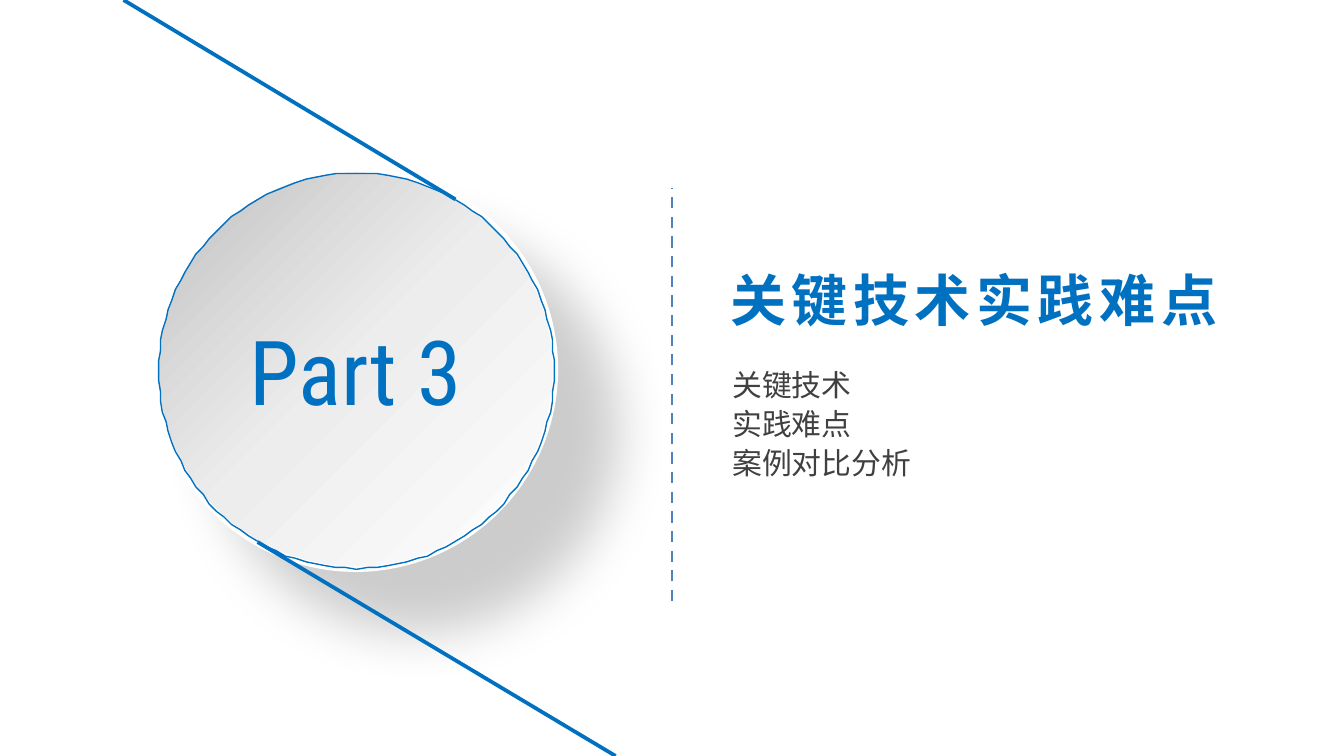
import math

import pptx
import pptx.dml.color
import pptx.enum.dml
import pptx.enum.shapes
import pptx.enum.text
import pptx.oxml
import pptx.oxml.ns
import pptx.util

Pt = pptx.util.Pt
qn = pptx.oxml.ns.qn
NS = pptx.oxml.ns.nsdecls("a")
BLUE, SLATE, GREY = "0070C0", "4F81BD", "404040"
CJK = "Noto Sans CJK SC"


def color(code):
    return pptx.dml.color.RGBColor.from_string(code)


def place(shape, box):
    shape.left, shape.top, shape.width, shape.height = map(Pt, box)


def style(para, face, size, code, bold=False, gap=0):
    for run in para.runs:
        font = run.font
        font.name, font.size, font.bold = face, Pt(size), bold
        font.color.rgb = color(code)
        props = font._element
        props.append(pptx.oxml.parse_xml(f'<a:ea {NS} typeface="{face}"/>'))
        if gap:
            props.set("spc", str(gap * 100))


def rule(slide, start, end, code, width):
    line = slide.shapes.add_connector(
        pptx.enum.shapes.MSO_CONNECTOR.STRAIGHT, *map(Pt, start + end))
    line.line.color.rgb = color(code)
    line.line.width = Pt(width)
    line._element.spPr.append(pptx.oxml.parse_xml(f"<a:effectLst {NS}/>"))
    return line


def disc(slide, box, text):
    """Raised round plate with a grey gradient and a soft shadow."""
    shape = slide.shapes.add_shape(
        pptx.enum.shapes.MSO_SHAPE.OVAL, *map(Pt, box))
    shape.fill.gradient()
    shape.fill.gradient_angle = 315
    props = shape._element.spPr
    stops = props.find(".//" + qn("a:gsLst"))
    for stop in list(stops):
        stops.remove(stop)
    for pos, code in ((0, "C0C0C0"), (49, "EDEDED"), (100, "FFFFFF")):
        stops.append(pptx.oxml.parse_xml(
            f'<a:gs {NS} pos="{pos * 1000}"><a:srgbClr val="{code}"/></a:gs>'))
    shape.line.color.rgb = color("FFFFFF")
    shape.line.width = Pt(3)

    # Shadow to the lower right
    shape.shadow.inherit = False
    props.find(qn("a:effectLst")).append(pptx.oxml.parse_xml(
        f'<a:outerShdw {NS} blurRad="{Pt(29)}" dist="{Pt(46)}" '
        'dir="2700000" algn="tl" rotWithShape="0"><a:srgbClr val="000000">'
        '<a:alpha val="20000"/></a:srgbClr></a:outerShdw>'))

    # Label
    frame = shape.text_frame
    frame.margin_left = frame.margin_right = 0
    frame.vertical_anchor = pptx.enum.text.MSO_ANCHOR.MIDDLE
    frame.text = text
    para = frame.paragraphs[0]
    para.alignment = pptx.enum.text.PP_ALIGN.CENTER
    style(para, "Roboto Condensed", 48, BLUE)


def ring(slide, box):
    """Two half circles, each met by a line running off the slide."""
    left, top, width, height = box
    radius = width / 2

    def point(angle):
        turn = math.radians(angle)
        return (left + radius * (1 + math.cos(turn)),
                top + radius * (1 + math.sin(turn)))

    for start, edge in ((-60, (66.2, 0)), (120, (329.8, 405))):
        points = [point(start + step) for step in range(0, 181, 3)]
        build = slide.shapes.build_freeform(*points[0], scale=Pt(1))
        build.add_line_segments(points[1:], close=False)
        arc = build.convert_to_shape()
        arc.fill.background()
        arc.line.color.rgb = color(BLUE)
        arc.line.width = Pt(0)
        arc.shadow.inherit = False
        rule(slide, edge, points[0], BLUE, 0)


def heading(shape, box, text):
    place(shape, box)
    frame = shape.text_frame
    frame.text = text
    frame.word_wrap = False
    frame.auto_size = pptx.enum.text.MSO_AUTO_SIZE.NONE
    frame.vertical_anchor = pptx.enum.text.MSO_ANCHOR.MIDDLE
    para = frame.paragraphs[0]
    para.alignment = pptx.enum.text.PP_ALIGN.LEFT
    style(para, CJK, 30, BLUE, bold=True, gap=3)


def topics(shape, box, items):
    place(shape, box)
    frame = shape.text_frame
    frame.text = "\n".join(items)
    frame.word_wrap = True
    frame.auto_size = pptx.enum.text.MSO_AUTO_SIZE.NONE
    frame.margin_left = frame.margin_right = 0
    frame.margin_top = frame.margin_bottom = 0
    for para in frame.paragraphs:
        props = para._p.get_or_add_pPr()
        props.set("marL", "0")
        props.set("indent", "0")
        props.append(pptx.oxml.parse_xml(f"<a:buNone {NS}/>"))
        para.space_before = Pt(0)
        para.line_spacing = Pt(21)
        style(para, CJK, 16, GREY)


def main():
    deck = pptx.Presentation()
    deck.slide_width, deck.slide_height = Pt(720), Pt(405)
    slide = deck.slides.add_slide(deck.slide_layouts[1])
    title, body = slide.placeholders

    # Part number
    disc(slide, (83.5, 90.9, 214, 214), "Part 3")
    ring(slide, (85, 92.6, 212, 212))

    # Divider
    split = rule(slide, (360, 322), (360, 100.5), SLATE, 1.5)
    split.line.dash_style = pptx.enum.dml.MSO_LINE.DASH

    # Section title and its topics
    heading(title, (384, 138, 281, 44), "关键技术实践难点")
    topics(body, (392.4, 194.5, 148, 63),
           ("关键技术", "实践难点", "案例对比分析"))

    deck.save("out.pptx")


if __name__ == "__main__":
    main()
